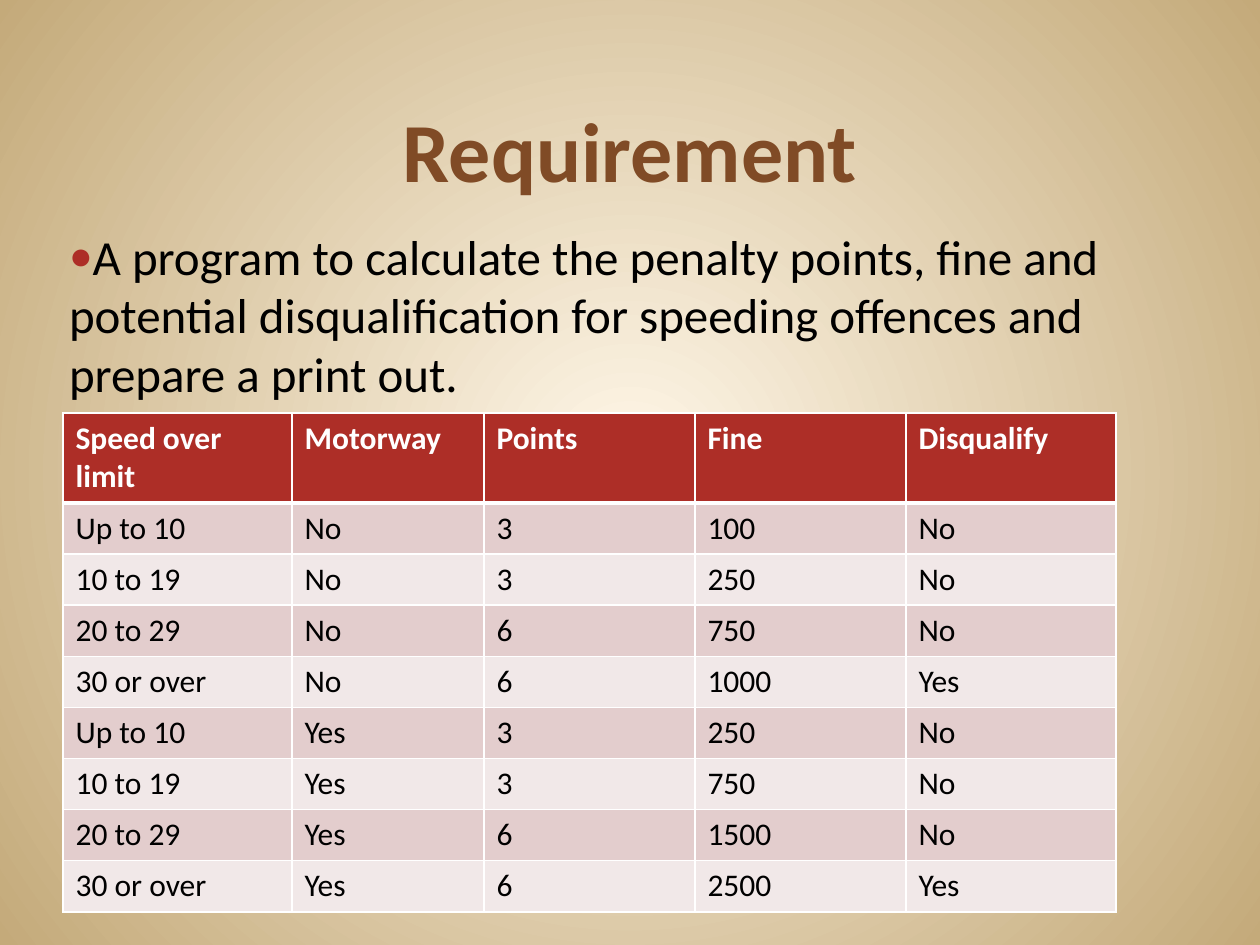
from lxml import etree
from pptx import Presentation
from pptx.dml.color import RGBColor
from pptx.enum.text import MSO_ANCHOR, MSO_AUTO_SIZE, PP_ALIGN
from pptx.oxml import parse_xml
from pptx.oxml.ns import nsdecls, qn
from pptx.util import Pt

# Content
TITLE = "Requirement"
BODY = ("A program to calculate the penalty points, fine and potential "
        "disqualification for speeding offences and prepare a print out.")
HEADER = ("Speed over limit", "Motorway", "Points", "Fine", "Disqualify")
PENALTIES = [
    ("Up to 10", "No", "3", "100", "No"),
    ("10 to 19", "No", "3", "250", "No"),
    ("20 to 29", "No", "6", "750", "No"),
    ("30 or over", "No", "6", "1000", "Yes"),
    ("Up to 10", "Yes", "3", "250", "No"),
    ("10 to 19", "Yes", "3", "750", "No"),
    ("20 to 29", "Yes", "6", "1500", "No"),
    ("30 or over", "Yes", "6", "2500", "Yes"),
]

# Layout in px
PAGE = (1260, 945)
TITLE_BOX = (63, 42, 1134, 157)
BODY_BOX = (63, 220, 1134, 624)
TABLE_LEFT, TABLE_TOP = 63, 413
COLUMNS = (229, 192, 211, 211, 210)
ROWS = (90,) + (51,) * len(PENALTIES)
INSET, BULLET_INDENT = 6, -38

# Style
FONT = "Calibri"
BLACK = RGBColor(0x00, 0x00, 0x00)
WHITE = RGBColor(0xFF, 0xFF, 0xFF)
BROWN = RGBColor(0x80, 0x4B, 0x26)
RED = RGBColor(0xAD, 0x2E, 0x27)
BANDS = (RGBColor(0xE3, 0xCD, 0xCD), RGBColor(0xF1, 0xE8, 0xE8))
CREAM = RGBColor(0xFF, 0xF7, 0xE8)
SAND = RGBColor(0xC4, 0xAA, 0x7A)
LEFT, CENTER = PP_ALIGN.LEFT, PP_ALIGN.CENTER
TOP, BOTTOM = MSO_ANCHOR.TOP, MSO_ANCHOR.BOTTOM
NO_AUTOFIT = MSO_AUTO_SIZE.NONE


def px(length):
    return round(length * 914400 / 126)


def write(frame, text, size, color, bold=False, align=LEFT):
    para = frame.paragraphs[0]
    para.alignment = align
    span = para.add_run()
    span.text = text
    span.font.name = FONT
    span.font.size = Pt(size)
    span.font.bold = bold
    span.font.color.rgb = color
    return para


def place(box, area, anchor, side, bottom):
    box.left, box.top, box.width, box.height = map(px, area)
    frame = box.text_frame
    frame.auto_size = NO_AUTOFIT
    frame.word_wrap = True
    frame.vertical_anchor = anchor
    frame.margin_left = frame.margin_right = frame.margin_top = px(side)
    frame.margin_bottom = px(bottom)
    return frame


def add_bullet(para):
    props = para._p.get_or_add_pPr()
    props.set("marL", "0")
    props.set("indent", str(px(BULLET_INDENT)))
    color = etree.SubElement(props, qn("a:buClr"))
    etree.SubElement(color, qn("a:srgbClr"), val=str(RED))
    etree.SubElement(props, qn("a:buSzPct"), val="80000")
    etree.SubElement(props, qn("a:buFont"), typeface="Arial")
    etree.SubElement(props, qn("a:buChar"), char="●")


def set_borders(cell, top, bottom):
    props = cell._tc.get_or_add_tcPr()
    widths = (("L", 1), ("R", 1), ("T", top), ("B", bottom))
    for index, (side, width) in enumerate(widths):
        props.insert(index, parse_xml(
            f'<a:ln{side} {nsdecls("a")} w="{Pt(width)}"><a:solidFill>'
            f'<a:srgbClr val="{WHITE}"/></a:solidFill></a:ln{side}>'))


def set_background(page):
    stops = "".join(
        f'<a:gs pos="{position}"><a:srgbClr val="{color}"/></a:gs>'
        for position, color in ((0, CREAM), (100000, SAND)))
    page._element.cSld.insert(0, parse_xml(
        f'<p:bg {nsdecls("p", "a")}><p:bgPr><a:gradFill rotWithShape="1">'
        f'<a:gsLst>{stops}</a:gsLst><a:path path="circle">'
        '<a:fillToRect l="50000" t="50000" r="50000" b="50000"/></a:path>'
        '</a:gradFill><a:effectLst/></p:bgPr></p:bg>'))


def add_penalty_table(page):
    shape = page.shapes.add_table(
        len(ROWS), len(COLUMNS), px(TABLE_LEFT), px(TABLE_TOP),
        px(sum(COLUMNS)), px(sum(ROWS)))
    table = shape.table
    for column, width in zip(table.columns, COLUMNS):
        column.width = px(width)
    for row, height in zip(table.rows, ROWS):
        row.height = px(height)
    for r, texts in enumerate([HEADER] + PENALTIES):
        is_header = r == 0
        for c, text in enumerate(texts):
            cell = table.cell(r, c)
            cell.fill.solid()
            cell.fill.fore_color.rgb = RED if is_header else BANDS[(r - 1) % 2]
            set_borders(cell, top=3 if r == 1 else 1,
                        bottom=3 if is_header else 1)
            write(cell.text_frame, text, 18,
                  WHITE if is_header else BLACK, bold=is_header)


def main():
    deck = Presentation()
    deck.slide_width, deck.slide_height = map(px, PAGE)
    page = deck.slides.add_slide(deck.slide_layouts[1])
    set_background(page)

    # Title and description
    title, body = page.placeholders
    frame = place(title, TITLE_BOX, BOTTOM, side=INSET, bottom=0)
    write(frame, TITLE, 48, BROWN, bold=True, align=CENTER)
    frame = place(body, BODY_BOX, TOP, side=INSET, bottom=INSET)
    para = write(frame, BODY, 28, BLACK)
    para.space_before = Pt(2)
    add_bullet(para)

    # Penalty table
    add_penalty_table(page)
    deck.save("out.pptx")


if __name__ == "__main__":
    main()
